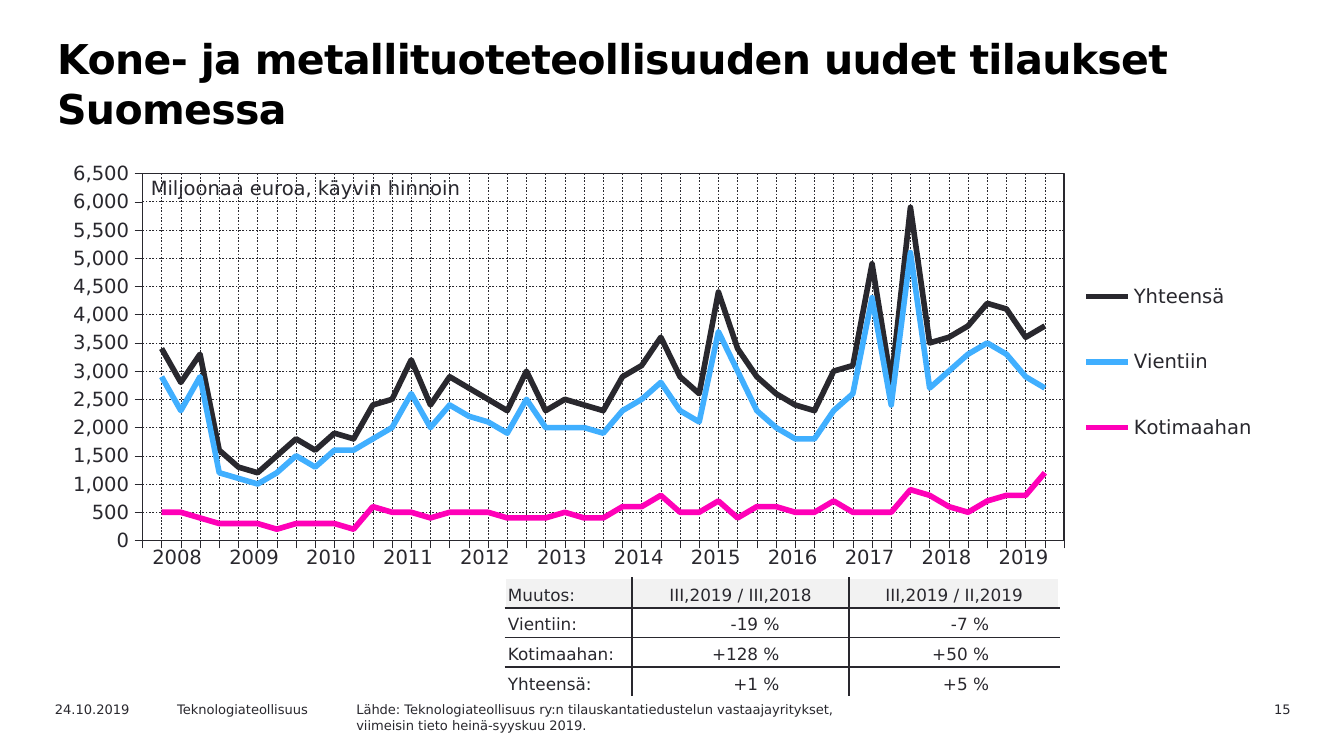
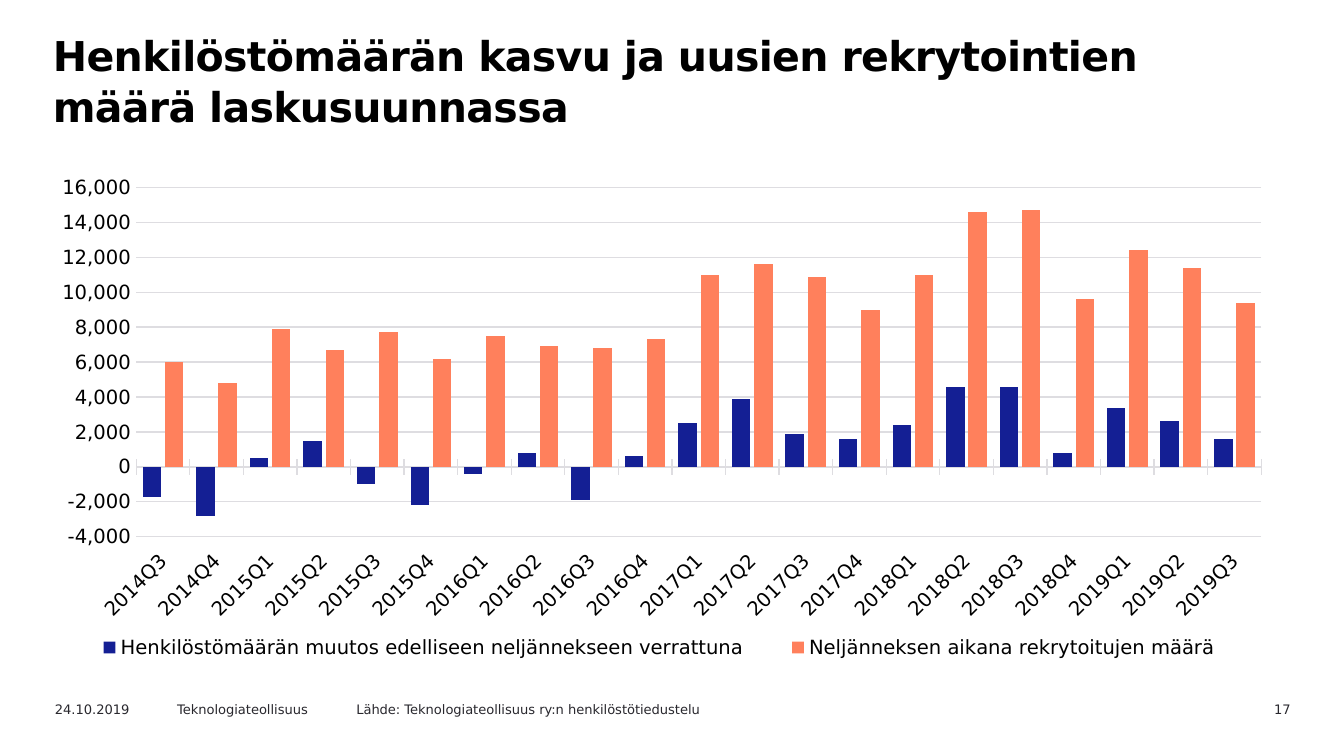
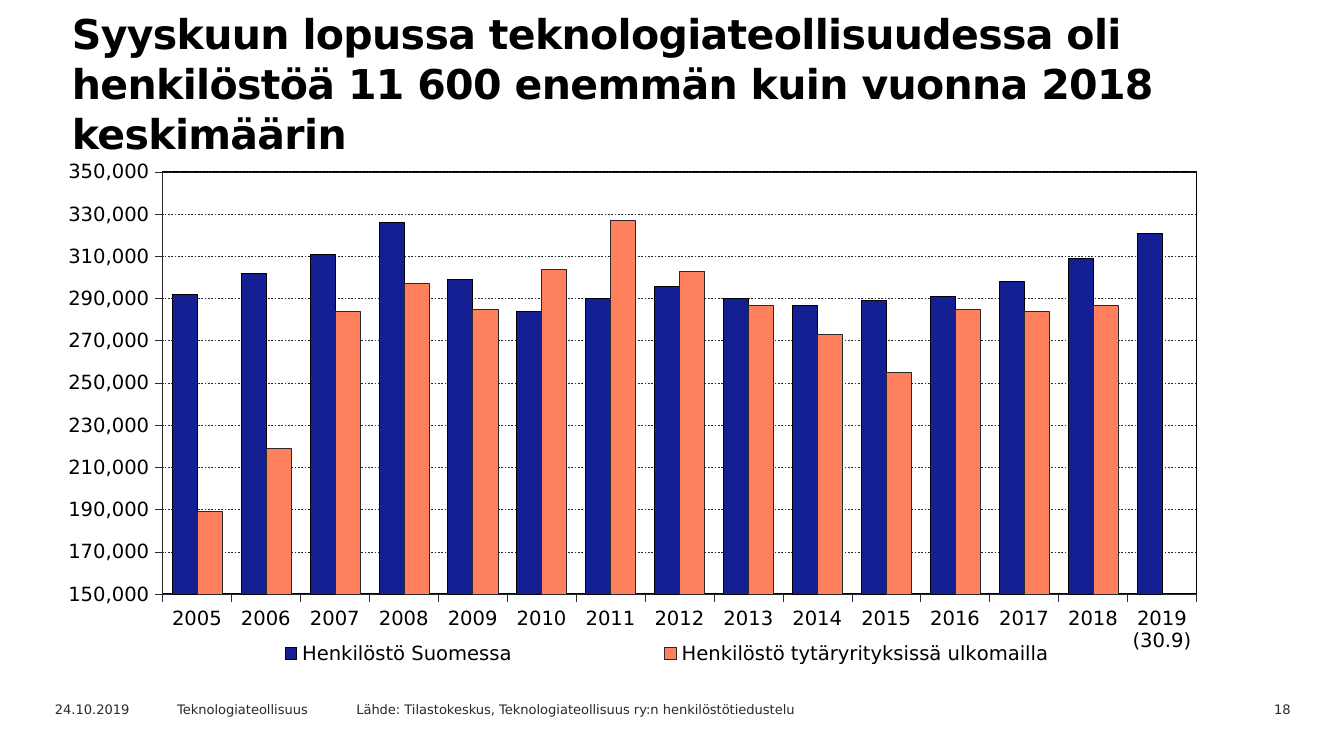
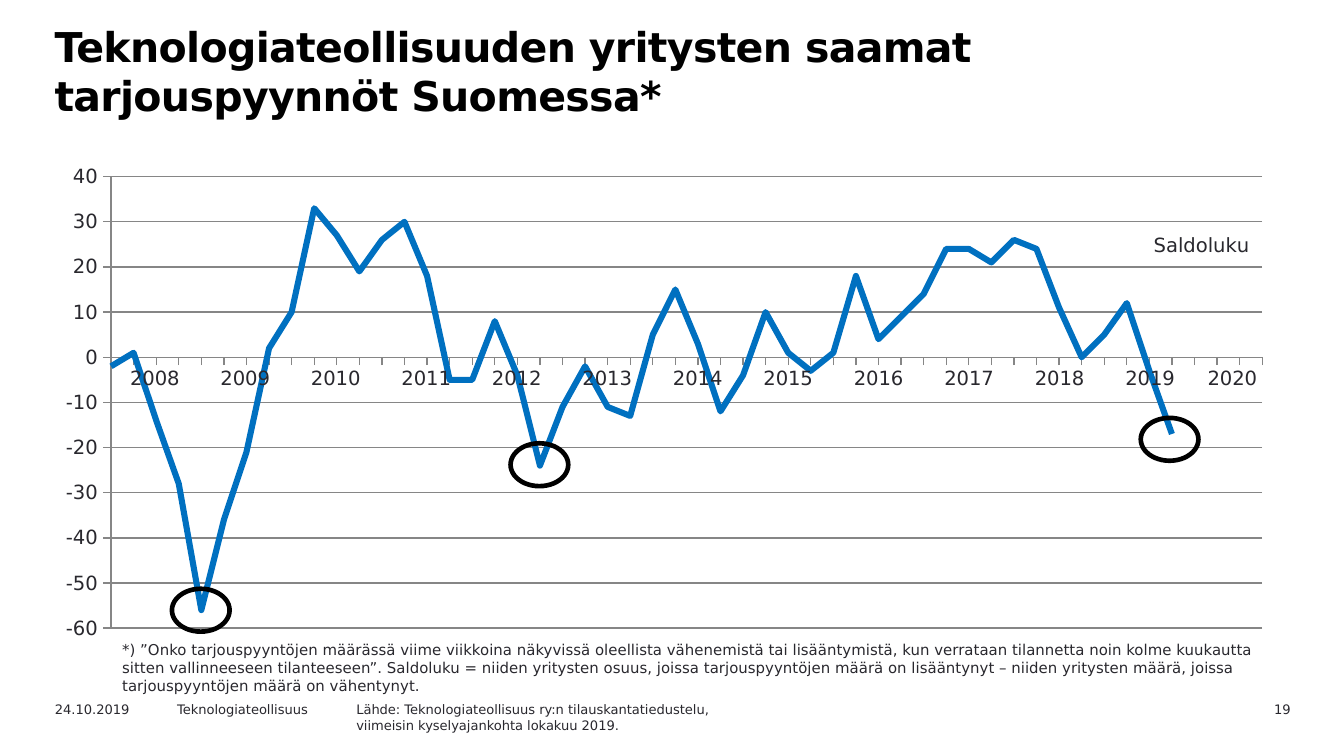
from dataclasses import dataclass
from typing import Optional

from lxml import etree
from pptx import Presentation
from pptx import util as u
from pptx.chart import data as chart_data
from pptx.dml.color import RGBColor
from pptx.enum import chart as charts
from pptx.enum import dml, shapes, text
from pptx.oxml.ns import qn

# Shared look
FONT = "DejaVu Sans"
BLACK = RGBColor(0x00, 0x00, 0x00)
WHITE = RGBColor(0xFF, 0xFF, 0xFF)
INK = RGBColor(0x29, 0x28, 0x2E)
PALE = RGBColor(0xF2, 0xF2, 0xF2)
SILVER = RGBColor(0xDE, 0xDD, 0xE1)
GREY = RGBColor(0x86, 0x86, 0x86)
SKY = RGBColor(0x40, 0xAF, 0xFF)
PINK = RGBColor(0xFF, 0x00, 0xB8)
NAVY = RGBColor(0x14, 0x1F, 0x94)
CORAL = RGBColor(0xFF, 0x80, 0x5C)
BLUE = RGBColor(0x00, 0x70, 0xC0)

DATE = "24.10.2019"
PUBLISHER = "Teknologiateollisuus"
FOOTER_TOP, FOOTER_HEIGHT = 13.13, 0.46
NO_TABLE_STYLE = "{2D5ABB26-0587-4C30-8999-92F81FD0307C}"
LEFT, CENTER, RIGHT = text.PP_ALIGN.LEFT, text.PP_ALIGN.CENTER, text.PP_ALIGN.RIGHT
LINE = charts.XL_CHART_TYPE.LINE
COLUMNS = charts.XL_CHART_TYPE.COLUMN_CLUSTERED
TICK = charts.XL_TICK_MARK


@dataclass(frozen=True)
class Box:
    """A place on the slide in centimetres."""
    left: float
    top: float
    width: float
    height: float

    def lengths(self) -> tuple:
        return tuple(u.Cm(side) for side in (self.left, self.top, self.width, self.height))


@dataclass(frozen=True)
class Stroke:
    color: RGBColor
    width: float
    dashed: bool = False


@dataclass(frozen=True)
class Frame:
    """Title, source and page number of one slide."""
    title: str
    title_box: Box
    title_pitch: float
    source: list
    source_width: float
    page: int


@dataclass(frozen=True)
class Series:
    name: str
    color: RGBColor
    values: list
    outline: Optional[Stroke] = None


@dataclass(frozen=True)
class AxisStyle:
    line: Optional[Stroke]
    grid: Optional[Stroke] = None
    tick: object = TICK.OUTSIDE
    labels: object = charts.XL_TICK_LABEL_POSITION.NEXT_TO_AXIS


@dataclass(frozen=True)
class ChartSpec:
    kind: object
    box: Box
    categories: list
    series: list
    scale: tuple
    category_axis: AxisStyle
    value_axis: AxisStyle
    plot_layout: tuple
    color: RGBColor = INK
    number_format: str = "#,##0"
    plot_border: Optional[Stroke] = None
    legend: object = None
    legend_layout: Optional[tuple] = None
    gap: int = 75
    overlap: int = 0


# Text
def write_lines(frame, lines: list, size: float, color: RGBColor = INK, align=LEFT,
                bold: bool = False, pitch: Optional[float] = None) -> None:
    for index, line in enumerate(lines):
        paragraph = frame.paragraphs[0] if index == 0 else frame.add_paragraph()
        paragraph.text = line
        paragraph.alignment = align
        paragraph.space_before = u.Pt(0)
        if pitch:
            paragraph.line_spacing = u.Pt(pitch)
        properties = paragraph._p.get_or_add_pPr()
        properties.set("marL", "0")
        properties.set("indent", "0")
        etree.SubElement(properties, qn("a:buNone"))
        font = paragraph.font
        font.name, font.size, font.bold = FONT, u.Pt(size), bold
        font.color.rgb = color


def add_label(slide, box: Box, label: str, size: float, align=LEFT, wrap: bool = True) -> None:
    frame = slide.shapes.add_textbox(*box.lengths()).text_frame
    frame.word_wrap = wrap
    write_lines(frame, [label], size, align=align)


def place(shape, box: Box) -> None:
    shape.left, shape.top, shape.width, shape.height = box.lengths()
    shape.text_frame.word_wrap = True
    shape.text_frame.auto_size = text.MSO_AUTO_SIZE.NONE
    shape.text_frame.vertical_anchor = text.MSO_ANCHOR.TOP


def add_framed_slide(presentation, frame: Frame):
    slide = presentation.slides.add_slide(presentation.slide_layouts[1])
    title, source = slide.placeholders[0], slide.placeholders[1]
    place(title, frame.title_box)
    title.text_frame.margin_top = u.Cm(0.13)
    title.text_frame.margin_left = u.Cm(0.29)
    write_lines(title.text_frame, [frame.title], 22, BLACK, bold=True, pitch=frame.title_pitch)
    for run in title.text_frame.paragraphs[0].runs:
        run._r.get_or_add_rPr().set("spc", "-34")
    place(source, Box(6.48, FOOTER_TOP, frame.source_width, FOOTER_HEIGHT))
    write_lines(source.text_frame, frame.source, 7)
    for left, width, label, align in ((0.79, 2.54, DATE, LEFT), (3.1, 3.61, PUBLISHER, LEFT),
                                      (22.25, 2.39, str(frame.page), RIGHT)):
        add_label(slide, Box(left, FOOTER_TOP, width, FOOTER_HEIGHT), label, 7, align)
    return slide


# Charts
def draw_line(line, stroke: Optional[Stroke]) -> None:
    if stroke is None:
        line.fill.background()
        return
    line.color.rgb = stroke.color
    line.width = u.Pt(stroke.width)
    if stroke.dashed:
        line.dash_style = dml.MSO_LINE.DASH


def set_layout(parent, layout: tuple, after=None, inner: bool = False) -> None:
    for old in parent.findall(qn("c:layout")):
        parent.remove(old)
    element = etree.Element(qn("c:layout"))
    manual = etree.SubElement(element, qn("c:manualLayout"))
    settings = [("layoutTarget", "inner")] if inner else []
    settings += [("xMode", "edge"), ("yMode", "edge")]
    settings += zip("xywh", layout)
    for tag, value in settings:
        etree.SubElement(manual, qn(f"c:{tag}")).set("val", str(value))
    if after is None:
        parent.insert(0, element)
    else:
        after.addnext(element)


def style_axis(axis, style: AxisStyle, color: RGBColor) -> None:
    axis.major_tick_mark = style.tick
    axis.minor_tick_mark = TICK.NONE
    axis.tick_label_position = style.labels
    font = axis.tick_labels.font
    font.name, font.size, font.bold = FONT, u.Pt(10.5), False
    font.color.rgb = color
    draw_line(axis.format.line, style.line)
    axis.has_major_gridlines = style.grid is not None
    if style.grid:
        draw_line(axis.major_gridlines.format.line, style.grid)


def start_lines_on_axis(chart) -> None:
    axis = chart.value_axis._element
    between = axis.find(qn("c:crossBetween"))
    if between is None:
        between = etree.Element(qn("c:crossBetween"))
    between.set("val", "midCat")
    axis.find(qn("c:crosses")).addnext(between)


def border_plot(plot_area, stroke: Stroke) -> None:
    properties = etree.SubElement(plot_area, qn("c:spPr"))
    etree.SubElement(properties, qn("a:noFill"))
    line = etree.SubElement(properties, qn("a:ln"), w=str(int(u.Pt(stroke.width))))
    fill = etree.SubElement(line, qn("a:solidFill"))
    etree.SubElement(fill, qn("a:srgbClr"), val=str(stroke.color))


def add_data_chart(slide, spec: ChartSpec):
    data = chart_data.CategoryChartData()
    data.categories = spec.categories
    for series in spec.series:
        data.add_series(series.name, series.values)
    chart = slide.shapes.add_chart(spec.kind, *spec.box.lengths(), data).chart
    chart.has_title = False
    chart.font.name, chart.font.size = FONT, u.Pt(10.5)
    chart.font.color.rgb = spec.color

    plot = chart.plots[0]
    plot.vary_by_categories = False
    for series, drawn in zip(spec.series, plot.series):
        if spec.kind == LINE:
            drawn.smooth = False
        else:
            drawn.invert_if_negative = False
            drawn.format.fill.solid()
            drawn.format.fill.fore_color.rgb = series.color
        draw_line(drawn.format.line, series.outline)
    if spec.kind == LINE:
        start_lines_on_axis(chart)
    else:
        plot.gap_width, plot.overlap = spec.gap, spec.overlap

    style_axis(chart.category_axis, spec.category_axis, spec.color)
    style_axis(chart.value_axis, spec.value_axis, spec.color)
    axis = chart.value_axis
    axis.minimum_scale, axis.maximum_scale, axis.major_unit = spec.scale
    axis.tick_labels.number_format = spec.number_format
    axis.tick_labels.number_format_is_linked = False

    plot_area = chart._chartSpace.chart.plotArea
    set_layout(plot_area, spec.plot_layout, inner=True)
    if spec.plot_border:
        border_plot(plot_area, spec.plot_border)
    chart.has_legend = spec.legend is not None
    if spec.legend is not None:
        legend = chart.legend
        legend.position = spec.legend
        legend.include_in_layout = False
        legend.font.name, legend.font.size, legend.font.bold = FONT, u.Pt(10.5), False
        legend.font.color.rgb = spec.color
        set_layout(legend._element, spec.legend_layout,
                   after=legend._element.find(qn("c:legendPos")))
    return chart


# Tables
def add_plain_table(slide, left: float, top: float, widths: list, row_height: float, rows: int):
    box = Box(left, top, sum(widths), row_height * rows)
    table = slide.shapes.add_table(rows, len(widths), *box.lengths()).table
    table.first_row = table.horz_banding = False
    table._tbl.tblPr.find(qn("a:tableStyleId")).text = NO_TABLE_STYLE
    for column, width in zip(table.columns, widths):
        column.width = u.Cm(width)
    for row in table.rows:
        row.height = u.Cm(row_height)
    return table


def add_year_row(slide, left: float, top: float, widths: list, height: float,
                 side: float, edge: float) -> None:
    table = add_plain_table(slide, left, top, widths, height, 1)
    for index, cell in enumerate(table.iter_cells()):
        cell.fill.background()
        cell.margin_left = cell.margin_right = u.Cm(side)
        cell.margin_top = cell.margin_bottom = u.Cm(edge)
        write_lines(cell.text_frame, [str(2008 + index)], 10.5, align=CENTER)


def border_cell(cell, inside: dict) -> None:
    properties = cell._tc.get_or_add_tcPr()
    for index, side in enumerate("LRTB"):
        line = etree.Element(qn(f"a:ln{side}"), w=str(int(u.Pt(1))))
        fill = etree.SubElement(line, qn("a:solidFill"))
        etree.SubElement(fill, qn("a:srgbClr"), val=str(INK if inside[side] else WHITE))
        properties.insert(index, line)


def add_change_table(slide, rows: list) -> None:
    widths = [2.39, 4.11, 3.96]
    table = add_plain_table(slide, 9.55, 10.93, widths, 0.56, len(rows))
    last_row, last_column = len(rows) - 1, len(widths) - 1
    for i, row in enumerate(rows):
        for j, label in enumerate(row):
            cell = table.cell(i, j)
            is_figure = i > 0 and j > 0
            cell.fill.solid()
            cell.fill.fore_color.rgb = WHITE if i else PALE
            border_cell(cell, {"L": j > 0, "R": j < last_column, "T": i > 0, "B": i < last_row})
            cell.vertical_anchor = text.MSO_ANCHOR.BOTTOM
            cell.margin_left = cell.margin_top = cell.margin_bottom = u.Cm(0.05)
            cell.margin_right = u.Cm(1.32 if is_figure else 0.05)
            align = LEFT if j == 0 else RIGHT if is_figure else CENTER
            write_lines(cell.text_frame, [label], 9, align=align)


# Slides
def build_new_orders(presentation) -> None:
    slide = add_framed_slide(presentation, Frame(
        "Kone- ja metallituoteteollisuuden uudet tilaukset Suomessa",
        Box(0.79, 0.51, 22.2, 2.13), 26.4,
        ["Lähde: Teknologiateollisuus ry:n tilauskantatiedustelun vastaajayritykset,",
         "viimeisin tieto heinä-syyskuu 2019."], 12.88, 15))
    # Hundreds of millions of euros; an empty quarter at both ends
    hundreds = {
        ("Yhteensä", INK): [
            34, 28, 33, 16, 13, 12, 15, 18, 16, 19, 18, 24, 25, 32, 24, 29, 27, 25, 23, 30, 23, 25,
            24, 23, 29, 31, 36, 29, 26, 44, 34, 29, 26, 24, 23, 30, 31, 49, 28, 59, 35, 36, 38, 42,
            41, 36, 38],
        ("Vientiin", SKY): [
            29, 23, 29, 12, 11, 10, 12, 15, 13, 16, 16, 18, 20, 26, 20, 24, 22, 21, 19, 25, 20, 20,
            20, 19, 23, 25, 28, 23, 21, 37, 30, 23, 20, 18, 18, 23, 26, 43, 24, 51, 27, 30, 33, 35,
            33, 29, 27],
        ("Kotimaahan", PINK): [
            5, 5, 4, 3, 3, 3, 2, 3, 3, 3, 2, 6, 5, 5, 4, 5, 5, 5, 4, 4, 4, 5, 4, 4, 6, 6, 8, 5, 5,
            7, 4, 6, 6, 5, 5, 7, 5, 5, 5, 9, 8, 6, 5, 7, 8, 8, 12],
    }
    series = [Series(name, color, [None, *(100 * value for value in values), None],
                     Stroke(color, 3)) for (name, color), values in hundreds.items()]
    grid = Stroke(INK, 0.25, dashed=True)
    add_data_chart(slide, ChartSpec(
        LINE, Box(0.78, 2.94, 23.32, 8.33), [str(n) for n in range(1, 50)], series,
        (0, 6500, 500),
        AxisStyle(Stroke(INK, 0.22), grid, labels=charts.XL_TICK_LABEL_POSITION.NONE),
        AxisStyle(Stroke(INK, 0.22), grid),
        plot_layout=(0.082, 0.041, 0.747, 0.833), plot_border=Stroke(INK, 0.75),
        legend=charts.XL_LEGEND_POSITION.RIGHT, legend_layout=(0.839, 0.196, 0.15, 0.545)))
    add_year_row(slide, 2.62, 10.19, [17.45 / 12] * 12, 0.79, 0.25, 0.13)
    add_label(slide, Box(2.6, 3.2, 6.6, 0.69), "Miljoonaa euroa, käyvin hinnoin", 10.5, wrap=False)
    add_change_table(slide, [
        ["Muutos:", "III,2019 / III,2018", "III,2019 / II,2019"],
        ["Vientiin:", "-19 %", "-7 %"],
        ["Kotimaahan:", "+128 %", "+50 %"],
        ["Yhteensä:", "+1 %", "+5 %"]])


def build_recruitment(presentation) -> None:
    slide = add_framed_slide(presentation, Frame(
        "Henkilöstömäärän kasvu ja uusien rekrytointien määrä laskusuunnassa",
        Box(0.71, 0.43, 22.2, 2.11), 27,
        ["Lähde: Teknologiateollisuus ry:n henkilöstötiedustelu"], 8.26, 17))
    # Quarters run from 2014Q3 to 2019Q3
    quarters = [f"{n // 4}Q{n % 4 + 1}" for n in range(2014 * 4 + 2, 2019 * 4 + 3)]
    series = [
        Series("Henkilöstömäärän muutos edelliseen neljännekseen verrattuna", NAVY,
               [-1700, -2800, 500, 1500, -1000, -2200, -400, 800, -1900, 600, 2500, 3900, 1900,
                1600, 2400, 4600, 4600, 800, 3400, 2600, 1600]),
        Series("Neljänneksen aikana rekrytoitujen määrä", CORAL,
               [6000, 4800, 7900, 6700, 7700, 6200, 7500, 6900, 6800, 7300, 11000, 11600, 10900,
                9000, 11000, 14600, 14700, 9600, 12400, 11400, 9400])]
    rule = Stroke(SILVER, 0.75)
    chart = add_data_chart(slide, ChartSpec(
        COLUMNS, Box(0.71, 3.15, 23.6, 9.6), quarters, series, (-4000, 16000, 2000),
        AxisStyle(rule, tick=TICK.CROSS, labels=charts.XL_TICK_LABEL_POSITION.LOW),
        AxisStyle(None, rule, tick=TICK.NONE), (0.079, 0.041, 0.901, 0.688),
        color=BLACK, legend=charts.XL_LEGEND_POSITION.BOTTOM,
        legend_layout=(0.02, 0.922, 0.956, 0.05), gap=70, overlap=-21))
    label_body = chart.category_axis._element.find(qn("c:txPr")).find(qn("a:bodyPr"))
    label_body.set("rot", "-2700000")


def build_personnel(presentation) -> None:
    slide = add_framed_slide(presentation, Frame(
        "Syyskuun lopussa teknologiateollisuudessa oli henkilöstöä 11 600 enemmän kuin "
        "vuonna 2018 keskimäärin",
        Box(1.07, 0, 22.2, 2.95), 27,
        ["Lähde: Tilastokeskus, Teknologiateollisuus ry:n henkilöstötiedustelu"], 9.8, 18))
    thousands = {
        ("Henkilöstö Suomessa", NAVY, BLACK): [
            292, 302, 311, 326, 299, 284, 290, 296, 290, 287, 289, 291, 298, 309, 321],
        ("Henkilöstö tytäryrityksissä ulkomailla", CORAL, INK): [
            189, 219, 284, 297, 285, 304, 327, 303, 287, 273, 255, 285, 284, 287],
    }
    years = [str(year) for year in range(2005, 2019)] + ["2019 (30.9)"]
    series = []
    for (name, color, edge), values in thousands.items():
        missing = [None] * (len(years) - len(values))
        series.append(Series(name, color, [1000 * value for value in values] + missing,
                             Stroke(edge, 0.25)))
    add_data_chart(slide, ChartSpec(
        COLUMNS, Box(1.09, 2.62, 22.28, 10.13), years, series, (150000, 350000, 20000),
        AxisStyle(Stroke(INK, 0.25)),
        AxisStyle(Stroke(INK, 0.25), Stroke(INK, 0.25, dashed=True)),
        color=BLACK, plot_layout=(0.089, 0.062, 0.877, 0.788), plot_border=Stroke(BLACK, 0.75),
        legend=charts.XL_LEGEND_POSITION.BOTTOM, legend_layout=(0.069, 0.945, 0.896, 0.05)))


def build_tender_requests(presentation) -> None:
    slide = add_framed_slide(presentation, Frame(
        "Teknologiateollisuuden yritysten saamat tarjouspyynnöt Suomessa*",
        Box(0.74, 0.28, 22.2, 2.39), 26.4,
        ["Lähde: Teknologiateollisuus ry:n tilauskantatiedustelu,",
         "viimeisin kyselyajankohta lokakuu 2019."], 8.26, 19))
    balance = [-2, 1, -14, -28, -56, -36, -21, 2, 10, 33, 27, 19, 26, 30, 18, -5, -5, 8, -4, -24,
               -11, -2, -11, -13, 5, 15, 3, -12, -4, 10, 1, -3, 1, 18, 4, 9, 14, 24, 24, 21, 26, 24,
               11, 0, 5, 12, -3, -17] + [None] * 4
    rule = Stroke(GREY, 0.75)
    chart = add_data_chart(slide, ChartSpec(
        LINE, Box(1.05, 3.01, 23.32, 9.17), [str(n + 1) for n in range(len(balance))],
        [Series("Saldoluku", BLUE, balance, Stroke(BLUE, 3.25))], (-60, 40, 10),
        AxisStyle(rule, labels=charts.XL_TICK_LABEL_POSITION.NONE), AxisStyle(rule, rule),
        number_format="0", plot_layout=(0.045, 0.036, 0.933, 0.931)))
    chart.has_title = True
    title = chart.chart_title
    write_lines(title.text_frame, ["Saldoluku"], 10.5)
    title.include_in_layout = True
    set_layout(title._element, (0.887, 0.143), after=title._element.find(qn("c:tx")))
    add_year_row(slide, 2.07, 6.84, [1.71] * 12 + [1.4], 0.66, 0.23, 0.1)
    add_label(slide, Box(2.06, 11.99, 21.97, 1.27),
              "*) ”Onko tarjouspyyntöjen määrässä viime viikkoina näkyvissä oleellista vähenemistä "
              "tai lisääntymistä, kun verrataan tilannetta noin kolme kuukautta sitten "
              "vallinneeseen tilanteeseen”. Saldoluku = niiden yritysten osuus, joissa "
              "tarjouspyyntöjen määrä on lisääntynyt – niiden yritysten määrä, joissa "
              "tarjouspyyntöjen määrä on vähentynyt.", 8)
    # Rings around the low points
    for left, top in ((3.25, 11.13), (21.56, 7.9), (9.65, 8.38)):
        ring = slide.shapes.add_shape(shapes.MSO_SHAPE.OVAL, *Box(left, top, 1.09, 0.81).lengths())
        ring.shadow.inherit = False
        ring.fill.background()
        draw_line(ring.line, Stroke(BLACK, 2.5))


def main() -> None:
    presentation = Presentation()
    presentation.slide_width, presentation.slide_height = u.Cm(25.4), u.Cm(14.29)
    build_new_orders(presentation)
    build_recruitment(presentation)
    build_personnel(presentation)
    build_tender_requests(presentation)
    presentation.save("out.pptx")


if __name__ == "__main__":
    main()
